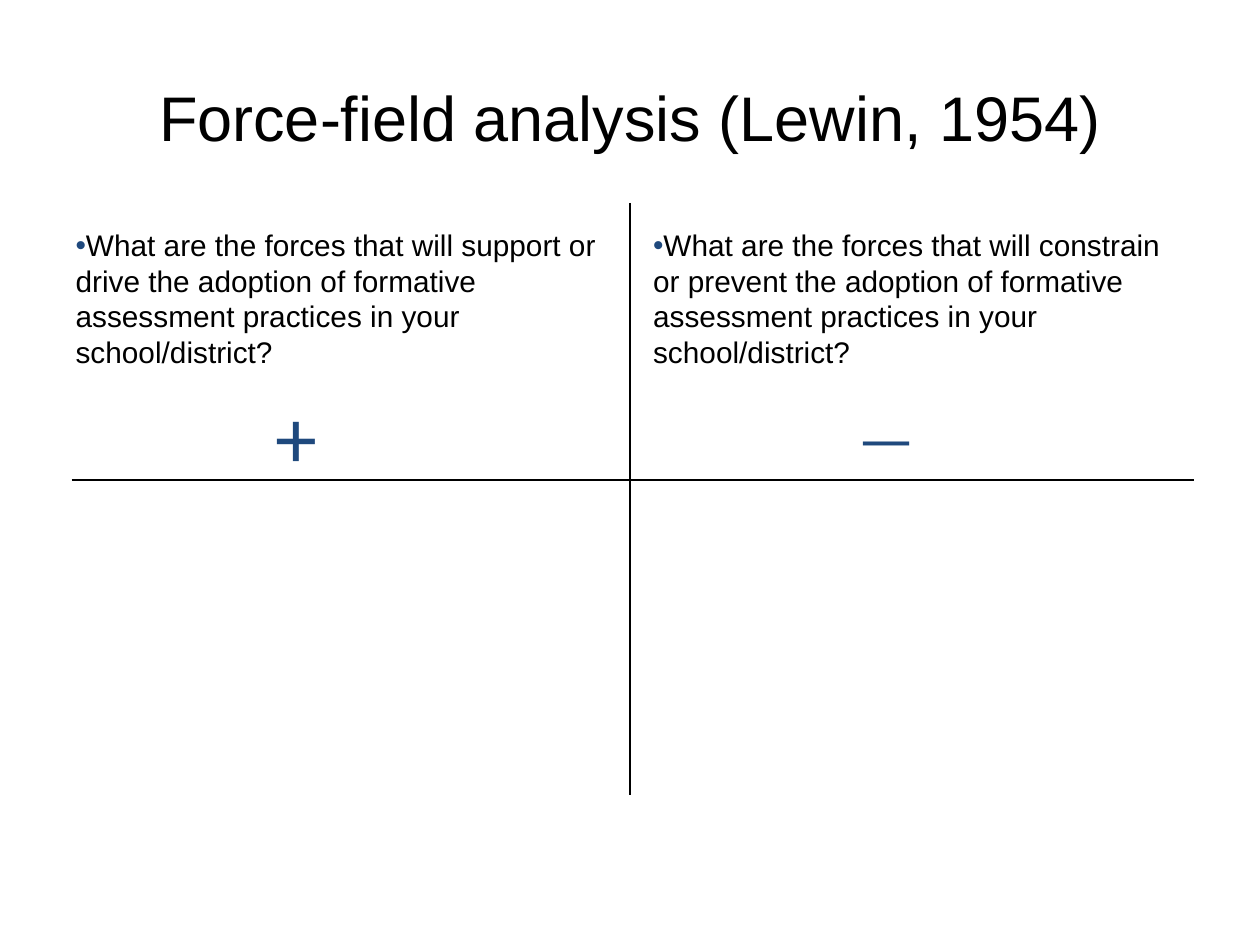
from lxml import etree
from pptx import Presentation
from pptx.dml.color import RGBColor
from pptx.enum.shapes import MSO_CONNECTOR
from pptx.enum.text import MSO_ANCHOR, MSO_AUTO_SIZE, PP_ALIGN
from pptx.oxml.ns import qn
from pptx.util import Pt

STRAIGHT = MSO_CONNECTOR.STRAIGHT
MIDDLE = MSO_ANCHOR.MIDDLE
GROW, FIXED = MSO_AUTO_SIZE.SHAPE_TO_FIT_TEXT, MSO_AUTO_SIZE.NONE
CENTER, LEFT = PP_ALIGN.CENTER, PP_ALIGN.LEFT
BLACK, BLUE = "000000", "1F497D"


def rgb(value):
    return RGBColor.from_string(value)


class ForceField:
    """Draws styled elements on the current slide."""

    fonts = {
        "title": {"name": "Arial", "size": Pt(36)},
        "body": {"name": "Arial", "size": Pt(17)},
        "plus": {"name": "Calibri", "size": Pt(48)},
        "minus": {"name": "Calibri", "size": Pt(36)},
    }

    def __init__(self, slide):
        self.s = slide

    def place(self, sp, box):
        for name, value in zip(("left", "top", "width", "height"), box):
            setattr(sp, name, Pt(value))

    def add_text(self, sp, text, style, color, align=LEFT):
        p = sp.text_frame.paragraphs[0]
        p.alignment = align
        r = p.add_run()
        r.text = text
        for name, value in self.fonts[style].items():
            setattr(r.font, name, value)
        r.font.color.rgb = rgb(color)
        return p

    def title(self, text, box):
        sp = self.s.shapes.title
        self.place(sp, box)
        sp.text_frame.vertical_anchor = MIDDLE
        self.add_text(sp, text, "title", BLACK, CENTER)

    def question(self, idx, text, box):
        sp = self.s.placeholders[idx]
        self.place(sp, box)
        sp.text_frame.auto_size = FIXED
        pPr = self.add_text(sp, text, "body", BLACK)._p.get_or_add_pPr()
        pPr.set("marL", "0")
        pPr.set("indent", "0")
        clr = etree.SubElement(pPr, qn("a:buClr"))
        etree.SubElement(clr, qn("a:srgbClr")).set("val", BLUE)
        etree.SubElement(pPr, qn("a:buChar")).set("char", "•")

    def line(self, x1, y1, x2, y2):
        c = self.s.shapes.add_connector(STRAIGHT, Pt(x1), Pt(y1), Pt(x2), Pt(y2))
        c.line.color.rgb = rgb(BLACK)
        c.line.width = Pt(1)
        etree.SubElement(c._element.spPr, qn("a:effectLst"))

    def sign(self, text, style, box, wrap):
        sp = self.s.shapes.add_textbox(*map(Pt, box))
        sp.text_frame.word_wrap = wrap
        sp.text_frame.auto_size = GROW
        self.add_text(sp, text, style, BLUE)


def main():
    prs = Presentation()
    prs.slide_width, prs.slide_height = Pt(720), Pt(540)
    field = ForceField(prs.slides.add_slide(prs.slide_layouts[3]))
    field.title("Force-field analysis (Lewin, 1954)", (36, 21.6, 648, 90))
    for idx, left, verbs in ((1, 36, "support or drive"), (2, 366, "constrain or prevent")):
        text = (f"What are the forces that will {verbs} the adoption of "
                "formative assessment practices in your school/district?")
        field.question(idx, text, (left, 126, 318, 356.4))
    field.line(41, 274.5, 682.5, 274.5)
    field.line(360, 116, 360, 454.5)
    field.sign("+", "plus", (150.5, 216, 84, 65), True)
    field.sign("—", "minus", (483, 224, 52, 50.5), False)
    prs.save("out.pptx")


if __name__ == "__main__":
    main()
